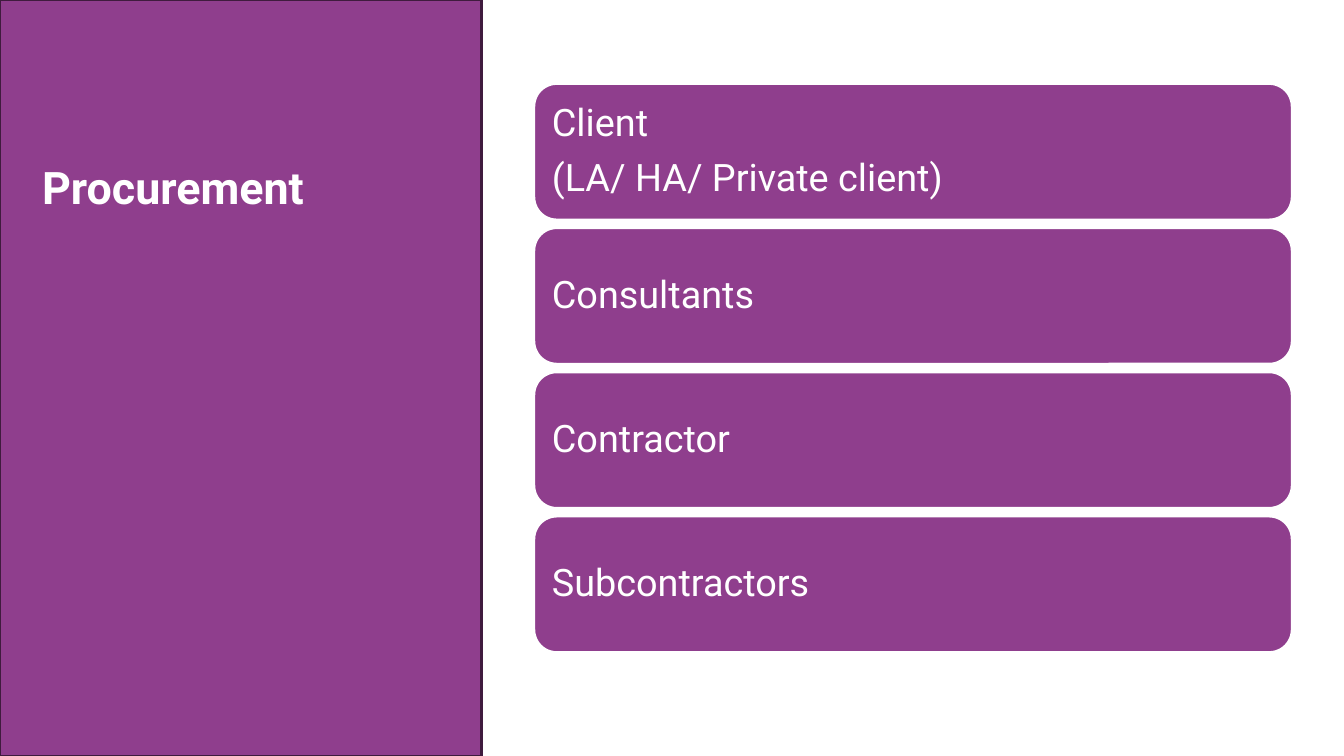
from dataclasses import dataclass

from pptx import Presentation
from pptx.dml.color import RGBColor
from pptx.enum import shapes, text
from pptx.util import Pt

COLORS = {"purple": "8F3E8D", "dark purple": "3F1B3E", "white": "FFFFFF"}
FONT = "Roboto"
SLIDE_WIDTH, SLIDE_HEIGHT = 960, 540
CARD_LEFT, CARD_TOP = 381.6, 59.9
CARD_WIDTH, CARD_HEIGHT = 541.2, 97
CARD_PITCH = 103


@dataclass(frozen=True)
class Panel:
    kind: shapes.MSO_SHAPE
    left: float
    top: float
    width: float
    height: float
    outline: str


@dataclass(frozen=True)
class TextStyle:
    size: float
    bold: bool
    space_after: float
    inset: float


TITLE_STYLE = TextStyle(size=32, bold=True, space_after=0, inset=7.2)
CARD_STYLE = TextStyle(size=27, bold=False, space_after=10, inset=7.92)

PARTIES = [
    ["Client", "(LA/ HA/ Private client)"],
    ["Consultants"],
    ["Contractor"],
    ["Subcontractors"],
]


def color(name: str) -> RGBColor:
    return RGBColor.from_string(COLORS[name])


def add_panel(slide, panel: Panel):
    shape = slide.shapes.add_shape(
        panel.kind, Pt(panel.left), Pt(panel.top), Pt(panel.width), Pt(panel.height)
    )
    shape.shadow.inherit = False
    shape.fill.solid()
    shape.fill.fore_color.rgb = color("purple")
    shape.line.color.rgb = color(panel.outline)
    shape.line.width = Pt(1.5)
    return shape


def write_lines(shape, lines: list[str], style: TextStyle) -> None:
    """Set one left-aligned paragraph per line, vertically centred."""
    frame = shape.text_frame
    frame.word_wrap = True
    frame.vertical_anchor = text.MSO_ANCHOR.MIDDLE
    frame.margin_left = frame.margin_right = Pt(style.inset)
    frame.margin_top = frame.margin_bottom = Pt(style.inset)
    frame.text = "\n".join(lines)
    for paragraph in frame.paragraphs:
        paragraph.alignment = text.PP_ALIGN.LEFT
        paragraph.line_spacing = 0.9
        paragraph.space_after = Pt(style.space_after)
        paragraph.font.name = FONT
        paragraph.font.size = Pt(style.size)
        paragraph.font.bold = style.bold
        paragraph.font.color.rgb = color("white")


def main() -> None:
    presentation = Presentation()
    presentation.slide_width = Pt(SLIDE_WIDTH)
    presentation.slide_height = Pt(SLIDE_HEIGHT)
    slide = presentation.slides.add_slide(presentation.slide_layouts[6])

    sidebar = Panel(shapes.MSO_SHAPE.RECTANGLE, 0, 0, 344, SLIDE_HEIGHT, "dark purple")
    add_panel(slide, sidebar)
    title = slide.shapes.add_textbox(Pt(23), Pt(110), Pt(296), Pt(52))
    write_lines(title, ["Procurement"], TITLE_STYLE)

    for row, lines in enumerate(PARTIES):
        card = Panel(
            shapes.MSO_SHAPE.ROUNDED_RECTANGLE,
            CARD_LEFT,
            CARD_TOP + row * CARD_PITCH,
            CARD_WIDTH,
            CARD_HEIGHT,
            "white",
        )
        write_lines(add_panel(slide, card), lines, CARD_STYLE)

    presentation.save("out.pptx")


if __name__ == "__main__":
    main()
